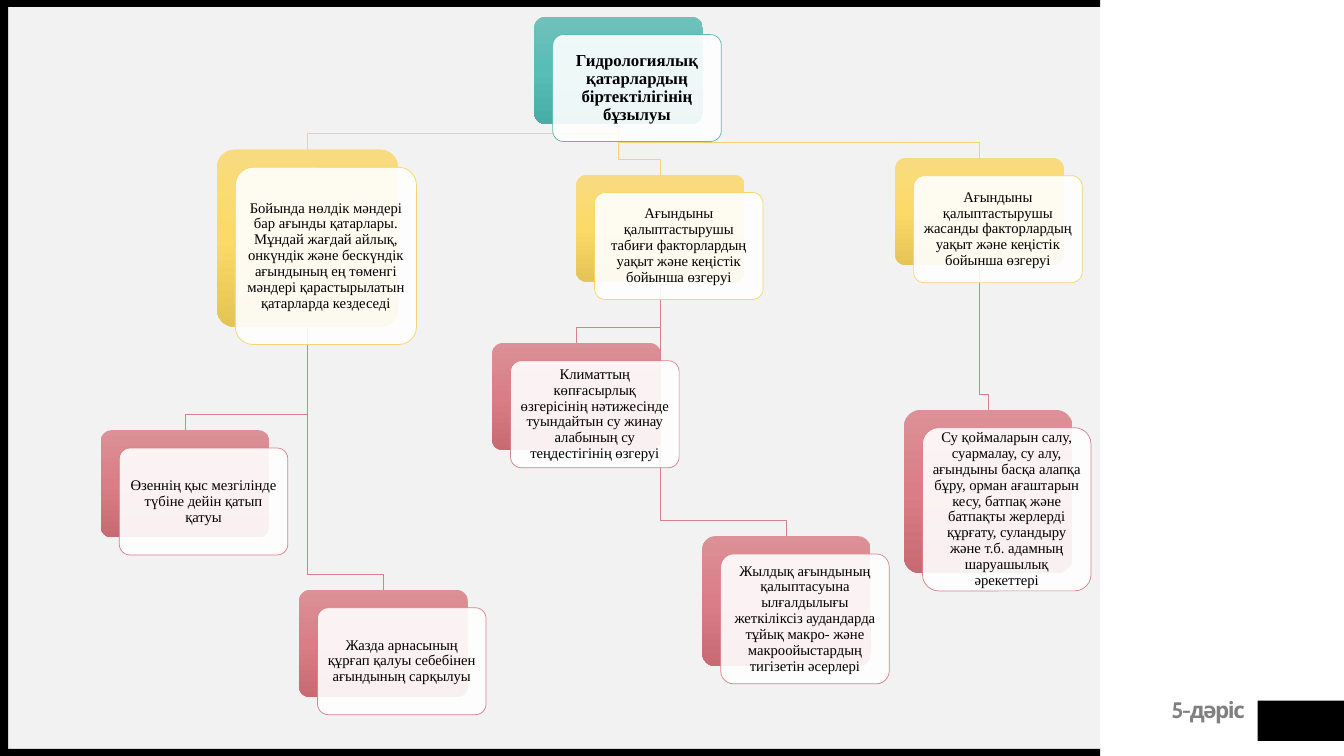
from copy import deepcopy

from lxml import etree
from pptx import Presentation
from pptx.dml import color
from pptx.enum import shapes, text
from pptx.oxml import ns
from pptx.util import Pt

COLORS = {
    "panel": "F2F2F2", "black": "000000", "white": "FFFFFF", "footer": "808080",
    "teal": "5CB8B3", "yellow": "F5D66E", "red": "D78189",
}
GRADIENTS = {
    "teal": ("72C0BB", "57BDB7", "48ADA7"),
    "yellow": ("F8DB81", "FCDA67", "E5C457"),
    "red": ("DC9097", "DB7D86", "C86A72"),
}
CARD_FONT = {"name": "Times New Roman", "size": Pt(10.5), "bold": False}
ROOT_FONT = CARD_FONT | {"size": Pt(12), "bold": True}
FOOTER_FONT = {"name": "Cabin", "size": Pt(16), "bold": True}

WIDTH, HEIGHT = 120.4, 76.4
SHIFT_X, SHIFT_Y = 13.2, 12.7
ELBOW = 11.2

# name: (parent, colour, left, top, width, height, wording)
NODES = {
    "root": (None, "teal", 381.6, 12, WIDTH, HEIGHT,
             "Гидрологиялық қатарлардың біртектілігінің бұзылуы"),
    "zero": ("root", "yellow", 154.9, 106.8, 129.4, 126.6,
             "Бойында нөлдік мәндері бар ағынды қатарлары. Мұндай жағдай айлық, "
             "онкүндік және бескүндік ағындының ең төменгі мәндері "
             "қарастырылатын қатарларда кездеседі"),
    "winter": ("zero", "red", 72, 307.3, WIDTH, HEIGHT,
               "Өзеннің қыс мезгілінде түбіне дейін қатып қатуы"),
    "summer": ("zero", "red", 213.6, 421.4, WIDTH, HEIGHT,
               "Жазда арнасының құрғап қалуы себебінен ағындының сарқылуы"),
    "natural": ("root", "yellow", 411.5, 124.8, WIDTH, HEIGHT,
                "Ағындыны қалыптастырушы табиғи факторлардың уақыт және "
                "кеңістік бойынша өзгеруі"),
    "climate": ("natural", "red", 351.5, 245, WIDTH, HEIGHT,
                "Климаттың көпғасырлық өзгерісінің нәтижесінде туындайтын су "
                "жинау алабының су теңдестігінің өзгеруі"),
    "annual": ("natural", "red", 501.6, 383, WIDTH, 92.8,
               "Жылдық ағындының қалыптасуына ылғалдылығы жеткіліксіз "
               "аудандарда тұйық макро- және макроойыстардың тигізетін әсерлері"),
    "artificial": ("root", "yellow", 639.4, 112.8, WIDTH, HEIGHT,
                   "Ағындыны қалыптастырушы жасанды факторлардың уақыт және "
                   "кеңістік бойынша өзгеруі"),
    "human": ("artificial", "red", 645.7, 292.8, WIDTH, 116.6,
              "Су қоймаларын салу, суармалау, су алу, ағындыны басқа алапқа "
              "бұру, орман ағаштарын кесу, батпақ және батпақты жерлерді "
              "құрғату, суландыру және т.б. адамның шаруашылық әрекеттері"),
}


def rgb(name):
    return color.RGBColor.from_string(COLORS[name])


def apply(target, values):
    for name, value in values.items():
        setattr(target, name, value)


def add_block(page, kind, place, fill=None):
    block = page.shapes.add_shape(kind, *map(Pt, place))
    block.shadow.inherit = False
    block.line.fill.background()
    if fill:
        block.fill.solid()
        block.fill.fore_color.rgb = rgb(fill)
    return block


def add_rounded(page, place, fill=None):
    block = add_block(page, shapes.MSO_SHAPE.ROUNDED_RECTANGLE, place, fill)
    block.adjustments[0] = 0.1
    return block


def set_outline(shape, name):
    shape.line.color.rgb = rgb(name)
    shape.line.width = Pt(0.5)


def set_gradient(shape, hexes):
    """Fill the shape with three evenly spaced colours, top to bottom."""
    shape.fill.gradient()
    shape.fill.gradient_angle = 270
    stop_list = shape._element.spPr.find(".//" + ns.qn("a:gsLst"))
    stop_list.insert(1, deepcopy(stop_list[0]))
    for index, (stop, value) in enumerate(zip(shape.fill.gradient_stops, hexes)):
        stop.position = index / 2
        stop.color.rgb = color.RGBColor.from_string(value)


def write(shape, wording, font, ink, margins, align, spacing):
    frame = shape.text_frame
    frame.word_wrap = True
    sides = ("margin_left", "margin_top", "margin_right", "margin_bottom")
    apply(frame, dict(zip(sides, map(Pt, margins))))
    para = frame.paragraphs[0]
    apply(para, {"alignment": align, "line_spacing": spacing})
    span = para.add_run()
    span.text = wording
    apply(span.font, font)
    span.font.color.rgb = rgb(ink)
    return span


def add_branch(page, parent, child):
    """Draw the elbow from the parent's bottom centre to the child's top centre."""
    _, _, left, top, width, height, _ = NODES[parent]
    _, tint, child_left, child_top, child_width, _, _ = NODES[child]
    start_x, end_x = left + width / 2, child_left + child_width / 2
    turn_y = child_top - ELBOW
    builder = page.shapes.build_freeform(Pt(start_x), Pt(top + height))
    corners = [(start_x, turn_y), (end_x, turn_y), (end_x, child_top)]
    builder.add_line_segments([(Pt(x), Pt(y)) for x, y in corners], close=False)
    branch = builder.convert_to_shape()
    branch.shadow.inherit = False
    branch.fill.background()
    set_outline(branch, tint)


def add_node(page, name):
    """Draw a gradient backing with a translucent text card shifted over it."""
    _, tint, left, top, width, height, wording = NODES[name]
    backing = add_rounded(page, (left, top, width, height))
    set_gradient(backing, GRADIENTS[tint])
    card = add_rounded(page, (left + SHIFT_X, top + SHIFT_Y, width, height), "white")
    tone = card._element.spPr.find(ns.qn("a:solidFill"))[0]
    etree.SubElement(tone, ns.qn("a:alpha"), val="90000")
    set_outline(card, tint)
    card.text_frame.vertical_anchor = text.MSO_ANCHOR.MIDDLE
    font = ROOT_FONT if name == "root" else CARD_FONT
    write(card, wording, font, "black", (3.6,) * 4, text.PP_ALIGN.CENTER, 0.9)


def add_footer(page):
    box = page.shapes.add_textbox(Pt(758.2), Pt(499.7), Pt(131), Pt(17.3))
    span = write(box, "5-дәріс", FOOTER_FONT, "footer", (0, 2.9, 0, 0),
                 text.PP_ALIGN.RIGHT, Pt(14))
    span.font._element.set("spc", "-100")


def main():
    deck = Presentation()
    apply(deck, {"slide_width": Pt(960), "slide_height": Pt(540)})
    page = deck.slides.add_slide(deck.slide_layouts[6])
    frame_parts = [
        ((5.8, 5, 780, 530), "panel"),
        ((898.3, 500.4, 61.7, 28.8), "black"),
        ((0, 535, 785.8, 5), "black"),
        ((0, 0, 785.8, 5), "black"),
        ((0, 0, 5.8, 540), "black"),
    ]
    for place, fill in frame_parts:
        add_block(page, shapes.MSO_SHAPE.RECTANGLE, place, fill)
    add_footer(page)
    for name, node in NODES.items():
        if node[0]:
            add_branch(page, node[0], name)
    for name in NODES:
        add_node(page, name)
    deck.save("out.pptx")


if __name__ == "__main__":
    main()
